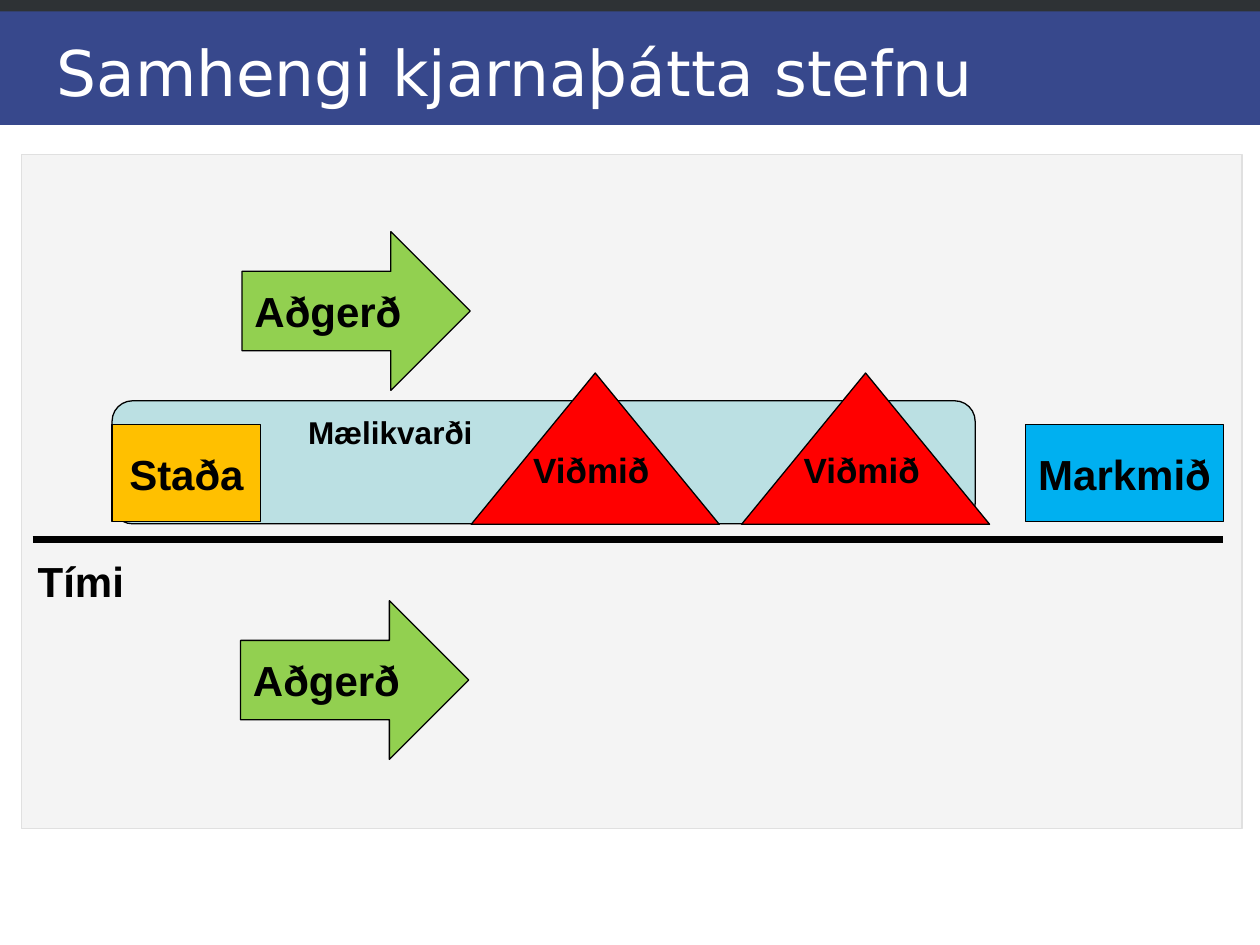
from lxml import etree
from pptx import Presentation
from pptx.dml.color import RGBColor
from pptx.enum.shapes import MSO_CONNECTOR, MSO_SHAPE
from pptx.enum.text import MSO_ANCHOR, PP_ALIGN
from pptx.oxml.ns import qn
from pptx.util import Cm, Pt

RECT, ROUND = MSO_SHAPE.RECTANGLE, MSO_SHAPE.ROUNDED_RECTANGLE
TRIANGLE, ARROW = MSO_SHAPE.ISOSCELES_TRIANGLE, MSO_SHAPE.RIGHT_ARROW
LEFT, CENTER = PP_ALIGN.LEFT, PP_ALIGN.CENTER
TOP, MIDDLE = MSO_ANCHOR.TOP, MSO_ANCHOR.MIDDLE

COLORS = {
    "panel": "F4F4F4", "panel_line": "E0E0E0", "band": "02176E",
    "strip": "2E3235", "measure": "BBE0E3", "status": "FFC000",
    "target": "FF0000", "action": "92D050", "goal": "00B0F0",
    "black": "000000", "white": "FFFFFF",
}


def add_box(shape, x, y, w, h, fill, line=None):
    sp = s.shapes.add_shape(shape, Cm(x), Cm(y), Cm(w), Cm(h))
    sp.shadow.inherit = False
    sp.fill.solid()
    sp.fill.fore_color.rgb = RGBColor.from_string(COLORS[fill])
    if line:
        sp.line.color.rgb = RGBColor.from_string(COLORS[line])
        sp.line.width = Pt(0.75)
    else:
        sp.line.fill.background()
    return sp


def add_text(sp, text, size, align=LEFT, anchor=TOP, font="Arial", color="black", bold=True):
    tf = sp.text_frame
    tf.word_wrap = True
    tf.vertical_anchor = anchor
    p = tf.paragraphs[0]
    p.alignment = align
    r = p.add_run()
    r.text = text
    r.font.name = font
    r.font.size = Pt(size)
    r.font.bold = bold
    r.font.color.rgb = RGBColor.from_string(COLORS[color])
    return tf


prs = Presentation()
prs.slide_width, prs.slide_height = Cm(25.4), Cm(19.05)
s = prs.slides.add_slide(prs.slide_layouts[6])

# Panel and header
add_box(RECT, 0.43, 3.12, 24.61, 13.59, "panel", "panel_line")
band = add_box(RECT, 0, 0, 25.4, 2.52, "band")
band_color = band.fill._xPr.find(qn("a:solidFill"))[0]
etree.SubElement(band_color, qn("a:alpha")).set("val", "79000")
add_box(RECT, 0, 0, 25.4, 0.23, "strip")

# Measure bar, its label set in past the status box
measure = add_box(ROUND, 2.26, 8.08, 17.4, 2.48, "measure", "black")
tf = add_text(measure, "Mælikvarði", 18)
tf.margin_left = Cm(3.83)

# Title
title = s.shapes.add_textbox(Cm(0.89), Cm(0.53), Cm(22.86), Cm(1.8))
add_text(title, "Samhengi kjarnaþátta stefnu", 36, anchor=MIDDLE,
         font="DejaVu Sans", color="white", bold=False)

# Time line
axis = s.shapes.add_connector(MSO_CONNECTOR.STRAIGHT, Cm(0.66), Cm(10.87), Cm(24.66), Cm(10.87))
axis.line.color.rgb = RGBColor.from_string(COLORS["black"])
axis.line.width = Pt(4)
etree.SubElement(axis._element.spPr, qn("a:effectLst"))
time_label = s.shapes.add_textbox(Cm(0.51), Cm(11.07), Cm(3.1), Cm(1.27))
add_text(time_label, "Tími", 24)

# Status and goal
for text, x, w, fill in [("Staða", 2.26, 3, "status"), ("Markmið", 20.67, 4, "goal")]:
    sp = add_box(RECT, x, 8.56, w, 1.96, fill, "black")
    add_text(sp, text, 24, CENTER, MIDDLE)

# Targets along the measure bar
for x in (9.5, 14.95):
    sp = add_box(TRIANGLE, x, 7.52, 5, 3.05, "target", "black")
    tf = add_text(sp, "Viðmið", 20)
    tf.margin_left = tf.margin_right = tf.margin_top = tf.margin_bottom = 0

# Actions above and below the time line
for x, y in [(4.88, 4.67), (4.85, 12.11)]:
    sp = add_box(ARROW, x, y, 4.6, 3.2, "action", "black")
    add_text(sp, "Aðgerð", 24, anchor=MIDDLE)

prs.save("out.pptx")
